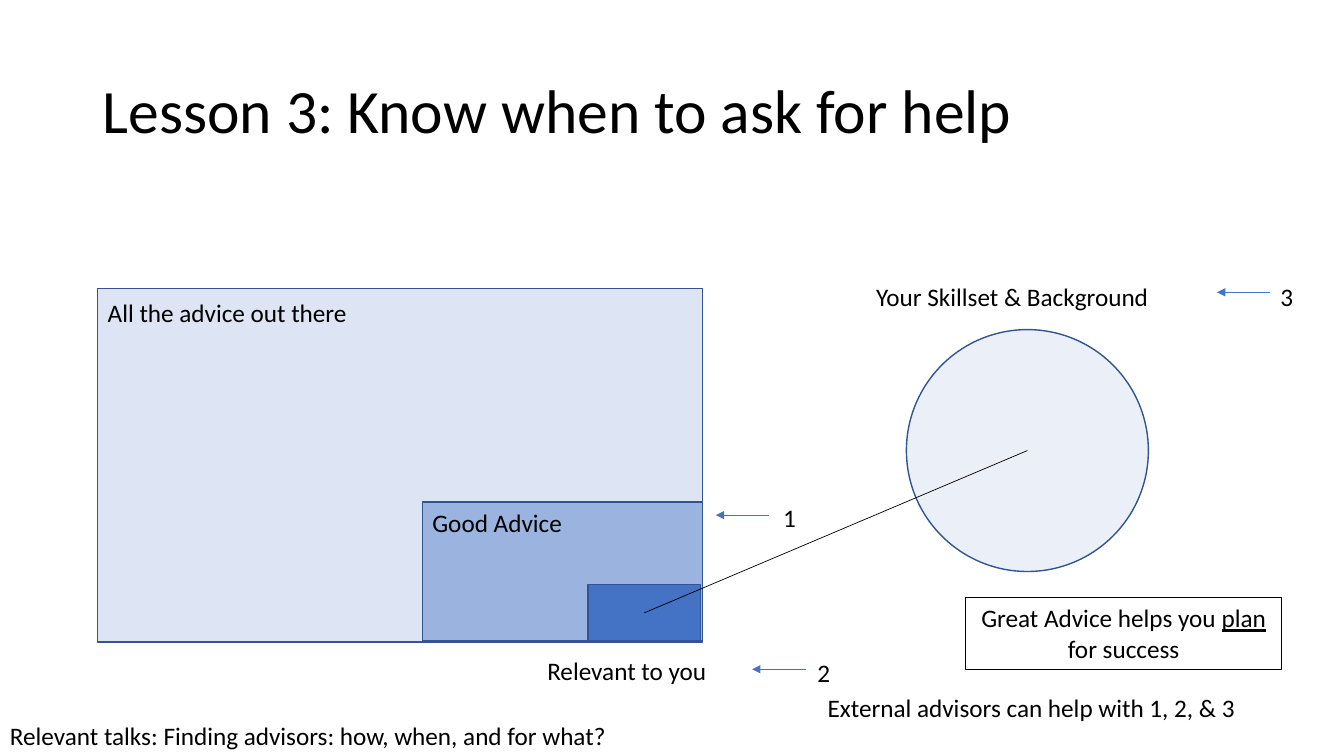
import pptx
import pptx.dml.color
import pptx.enum.shapes
import pptx.enum.text
import pptx.oxml.ns
import pptx.oxml.xmlchemy
import pptx.util

PX = 9144  # EMU per px, 100 px to the inch
THEME = {
    "font": "Calibri", "title": 44, "body": 18,
    "ink": "000000", "paper": "FFFFFF", "blue": "4472C4", "edge": "325491",
}
SHAPE = pptx.enum.shapes.MSO_SHAPE
ANCHOR = pptx.enum.text.MSO_ANCHOR
ALIGN = pptx.enum.text.PP_ALIGN
FIT = pptx.enum.text.MSO_AUTO_SIZE
new_element = pptx.oxml.xmlchemy.OxmlElement


def color(name):
    return pptx.dml.color.RGBColor.from_string(THEME[name])


def write(holder, *pieces, size="body", wrap=False, anchor=ANCHOR.TOP,
          align=ALIGN.LEFT, fit=FIT.SHAPE_TO_FIT_TEXT, spacing=None, underlined=None):
    frame = holder.text_frame
    frame.word_wrap, frame.auto_size, frame.vertical_anchor = wrap, fit, anchor
    paragraph = frame.paragraphs[0]
    paragraph.alignment, paragraph.line_spacing = align, spacing
    for piece in pieces:
        run = paragraph.add_run()
        run.text = piece
        run.font.name = THEME["font"]
        run.font.size = pptx.util.Pt(THEME[size])
        run.font.color.rgb = color("ink")
        run.font.underline = piece == underlined


deck = pptx.Presentation()
deck.slide_width, deck.slide_height = 1333 * PX, 750 * PX
shapes = deck.slides.add_slide(deck.slide_layouts[6]).shapes

# Title
title = shapes.add_textbox(92 * PX, 40 * PX, 1150 * PX, 145 * PX)
write(title, "Lesson 3: Know when to ask for help", size="title", wrap=True,
      anchor=ANCHOR.MIDDLE, fit=FIT.NONE, spacing=0.9)

# Nested areas of advice, the skillset circle and the callout
areas = [
    (SHAPE.RECTANGLE, 97, 286, 600, 351, "blue", 18, "edge", 1),
    (SHAPE.RECTANGLE, 419, 498, 278, 138, "blue", 43, "edge", 1),
    (SHAPE.OVAL, 899, 327, 240, 240, "blue", 10, "edge", 1),
    (SHAPE.RECTANGLE, 583, 580, 112, 56, "blue", 100, "edge", 1),
    (SHAPE.RECTANGLE, 958, 593, 313, 71, "paper", 100, "ink", 0.75),
]
for kind, left, top, width, height, fill, opacity, edge, weight in areas:
    area = shapes.add_shape(kind, left * PX, top * PX, width * PX, height * PX)
    area.shadow.inherit = False
    area.fill.solid()
    area.fill.fore_color.rgb = color(fill)
    if opacity < 100:
        tint = area._element.spPr.find(".//" + pptx.oxml.ns.qn("a:srgbClr"))
        alpha = new_element("a:alpha")
        alpha.set("val", str(opacity * 1000))
        tint.append(alpha)
    area.line.color.rgb = color(edge)
    area.line.width = pptx.util.Pt(weight)
callout = area
write(callout, "Great Advice helps you ", "plan ", "for success",
      wrap=True, align=ALIGN.CENTER, underlined="plan ")

# Link from relevant advice to the skillset, and the numbered arrows
links = [
    (639, 608, 1019, 447, "ink", False),
    (763, 511, 710, 511, "blue", True),
    (799, 664, 746, 664, "blue", True),
    (1260, 290, 1207, 290, "blue", True),
]
for x1, y1, x2, y2, ink, pointed in links:
    link = shapes.add_connector(pptx.enum.shapes.MSO_CONNECTOR.STRAIGHT,
                                x1 * PX, y1 * PX, x2 * PX, y2 * PX)
    link.line.color.rgb = color(ink)
    link.line.width = pptx.util.Pt(0.5)
    if pointed:
        head = new_element("a:tailEnd")
        head.set("type", "triangle")
        link._element.spPr.find(pptx.oxml.ns.qn("a:ln")).append(head)
    link._element.spPr.append(new_element("a:effectLst"))

# Labels
labels = [
    ("All the advice out there", 97, 290, 308),
    ("Good Advice", 419, 498, 173),
    ("Relevant to you", 533, 645, 213),
    ("Your Skillset & Background", 859, 274, 352),
    ("1", 767, 493, 36),
    ("2", 801, 647, 36),
    ("3", 1260, 274, 36),
    ("Relevant talks: Finding advisors: how, when, and for what?", 0, 710, 754),
    ("External advisors can help with 1, 2, & 3", 811, 682, 522),
]
for words, left, top, width in labels:
    write(shapes.add_textbox(left * PX, top * PX, width * PX, 40 * PX), words)

deck.save("out.pptx")
